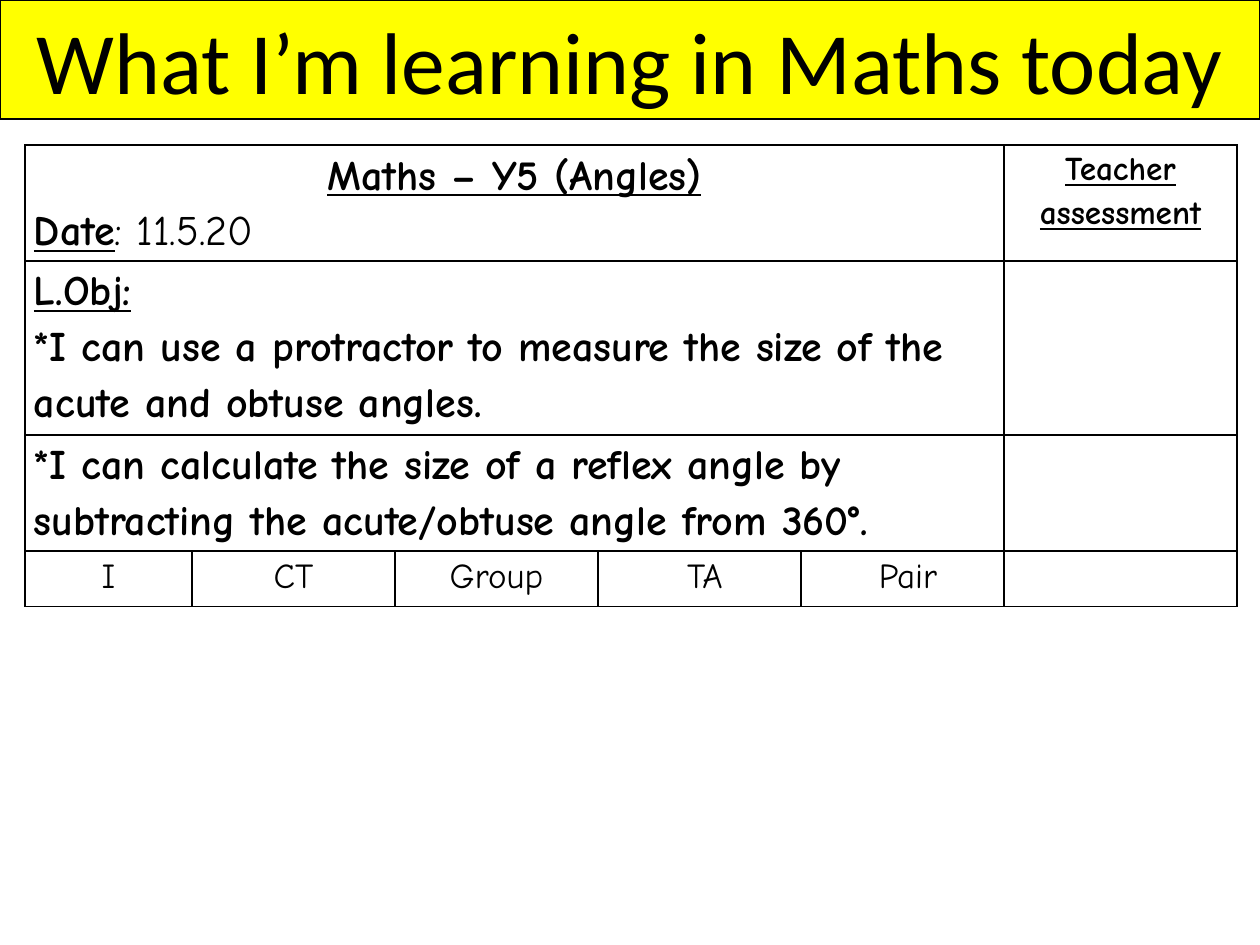
import pptx
import pptx.util
import pptx.dml.color
import pptx.enum.shapes
import pptx.enum.text
import pptx.oxml
import pptx.oxml.ns

EMU_PER_PX = 914400 // 126
COLOURS = {"banner": "FFFF00", "ink": "000000", "paper": "FFFFFF"}
CENTER = pptx.enum.text.PP_ALIGN.CENTER
LEFT = pptx.enum.text.PP_ALIGN.LEFT


def px(length):
    return pptx.util.Emu(length * EMU_PER_PX)


def colour(name):
    return pptx.dml.color.RGBColor.from_string(COLOURS[name])


class LessonSlide:
    heading_font = "Calibri"
    body_font = "Comic Neue"
    line_width = pptx.util.Pt(1)

    def __init__(self, deck):
        self.slide = deck.slides.add_slide(deck.slide_layouts[6])

    def style(self, font, face, size, bold=False, underline=False):
        font.name = face
        font.size = pptx.util.Pt(size)
        font.bold = bold
        font.underline = underline
        font.color.rgb = colour("ink")

    def banner(self, text, left, top, width, height):
        banner = self.slide.shapes.add_shape(
            pptx.enum.shapes.MSO_SHAPE.RECTANGLE, px(left), px(top), px(width), px(height))
        banner.shadow.inherit = False
        banner.fill.solid()
        banner.fill.fore_color.rgb = colour("banner")
        banner.line.color.rgb = colour("ink")
        banner.line.width = self.line_width
        banner.text_frame.word_wrap = True
        banner.text_frame.auto_size = pptx.enum.text.MSO_AUTO_SIZE.SHAPE_TO_FIT_TEXT
        heading = banner.text_frame.paragraphs[0]
        heading.text = text
        heading.alignment = CENTER
        self.style(heading.font, self.heading_font, 50)

    def grid(self, left, top, columns, rows):
        frame = self.slide.shapes.add_table(
            len(rows), len(columns), px(left), px(top), px(sum(columns)), px(sum(rows)))
        table = frame.table
        table.first_row = table.horz_banding = False
        for column, width in zip(table.columns, columns):
            column.width = px(width)
        for row, height in zip(table.rows, rows):
            row.height = px(height)
        for cell in table.iter_cells():
            self.border(cell)
            cell.fill.background()
        return table

    def border(self, cell):
        properties = cell._tc.get_or_add_tcPr()
        for edge in ("lnL", "lnR", "lnT", "lnB"):
            properties.append(pptx.oxml.parse_xml(
                f'<a:{edge} {pptx.oxml.ns.nsdecls("a")} w="{self.line_width}">'
                f'<a:solidFill><a:srgbClr val="{COLOURS["ink"]}"/></a:solidFill></a:{edge}>'))

    def cell_text(self, cell, lines, size, indent=0):
        cell.margin_left = cell.margin_right = px(9)
        cell.margin_top = cell.margin_bottom = 0
        for number, (runs, align) in enumerate(lines):
            frame = cell.text_frame
            paragraph = frame.add_paragraph() if number else frame.paragraphs[0]
            paragraph.alignment = align
            paragraph.line_spacing = 1.15
            if indent:
                paragraph._p.get_or_add_pPr().set("marL", str(px(indent)))
            for text, bold, underline in runs:
                run = paragraph.add_run()
                run.text = text
                font = run.font if len(runs) > 1 else paragraph.font
                self.style(font, self.body_font, size, bold, underline)


def main():
    deck = pptx.Presentation()
    deck.slide_width = pptx.util.Inches(10)
    deck.slide_height = pptx.util.Inches(7.5)
    lesson = LessonSlide(deck)
    lesson.banner("What I’m learning in Maths today", 0, 0, 1260, 119)

    table = lesson.grid(25, 145, [167] + [203] * 4 + [233], [112, 116, 116, 56])
    for row in range(3):
        table.cell(row, 0).merge(table.cell(row, 4))

    lesson.cell_text(table.cell(0, 0), [
        ([("Maths – Y5 (Angles)", True, True)], CENTER),
        ([("Date", True, True), (": 11.5.20", False, False)], LEFT),
    ], 24)
    lesson.cell_text(table.cell(0, 5), [([("Teacher assessment", True, True)], CENTER)], 19)
    lesson.cell_text(table.cell(1, 0), [
        ([("L.Obj:", True, True)], LEFT),
        ([("*I can use a protractor to measure the size of the acute and obtuse angles.",
           True, False)], LEFT),
    ], 24)
    lesson.cell_text(table.cell(2, 0), [
        ([("*I can calculate the size of a reflex angle by subtracting the "
           "acute/obtuse angle from 360°.", True, False)], LEFT),
    ], 24)

    supports = [("I", 0), ("CT", 0), ("Group", 0), ("TA", 11), ("Pair", 11)]
    for column, (support, indent) in enumerate(supports):
        lesson.cell_text(table.cell(3, column), [([(support, False, False)], CENTER)], 20, indent)
    support_mark = table.cell(3, 5)
    support_mark.fill.solid()
    support_mark.fill.fore_color.rgb = colour("paper")

    deck.save("out.pptx")


if __name__ == "__main__":
    main()
